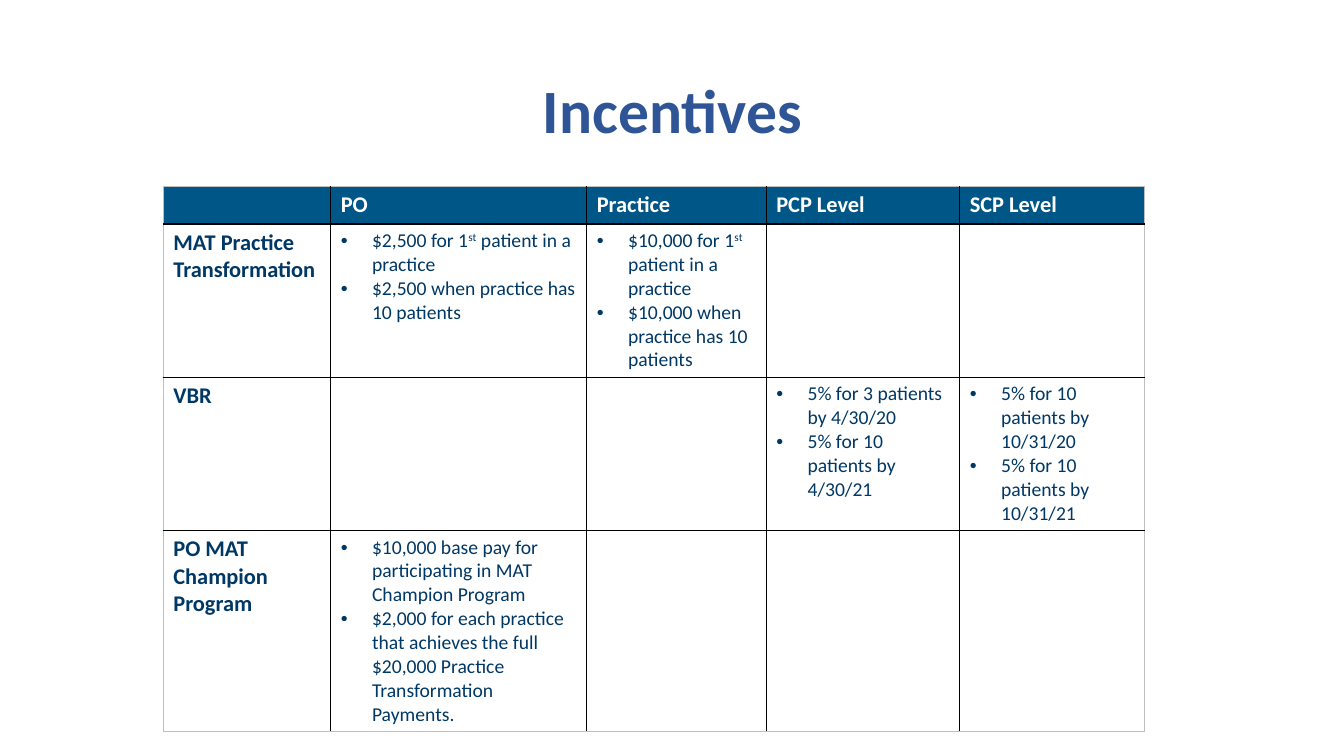
"""Build the Incentives slide: a centred title above a bordered table."""
from dataclasses import dataclass

from lxml import etree
from pptx import Presentation
from pptx.dml.color import RGBColor
from pptx.enum import text
from pptx.oxml import ns
from pptx.util import Inches, Pt


@dataclass(frozen=True)
class Theme:
    font: str = "Calibri"
    title: str = "2F5597"
    header: str = "005687"
    header_text: str = "FFFFFF"
    body: str = "003865"
    grid: str = "000000"
    frame: str = "BFBFBF"
    title_size: int = 44
    label_size: int = 16
    body_size: int = 14


THEME = Theme()
COLUMNS = [1.66, 2.54, 1.78, 1.92, 1.83]
ROWS = [0.37, 1.52, 1.52, 1.99]
HEADINGS = ["", "PO", "Practice", "PCP Level", "SCP Level"]
INCENTIVES = [
    ("MAT Practice Transformation",
     ["$2,500 for 1^st^ patient in a practice",
      "$2,500 when practice has 10 patients"],
     ["$10,000 for 1^st^ patient in a practice",
      "$10,000 when practice has 10 patients"],
     [], []),
    ("VBR", [], [],
     ["5% for 3 patients by 4/30/20", "5% for 10 patients by 4/30/21"],
     ["5% for 10 patients by 10/31/20", "5% for 10 patients by 10/31/21"]),
    ("PO MAT Champion Program",
     ["$10,000 base pay for participating in MAT Champion Program",
      "$2,000 for each practice that achieves the full $20,000 "
      "Practice Transformation Payments."],
     [], [], []),
]


def add_spans(para, content, size, color, bold=False):
    """Add runs to a paragraph; text between carets is superscript."""
    for index, part in enumerate(content.split("^")):
        span = para.add_run()
        span.text = part
        span.font.name = THEME.font
        span.font.size = Pt(size)
        span.font.bold = bold
        span.font.color.rgb = RGBColor.from_string(color)
        if index % 2:
            span.font._element.set("baseline", "30000")


def add_title(page, content):
    """Place and format the title placeholder."""
    box = page.shapes.title
    box.left, box.top = Inches(0.92), Inches(0.4)
    box.width, box.height = Inches(11.5), Inches(1.45)
    frame = box.text_frame
    frame.vertical_anchor = text.MSO_ANCHOR.MIDDLE
    para = frame.paragraphs[0]
    para.alignment = text.PP_ALIGN.CENTER
    para.line_spacing = 0.9
    add_spans(para, content, THEME.title_size, THEME.title, True)


def set_borders(cell, colors):
    """Draw one-point borders in the colour given for each side."""
    props = cell._tc.get_or_add_tcPr()
    for index, (side, color) in enumerate(colors.items()):
        line = etree.Element(ns.qn(f"a:ln{side}"), w=str(Pt(1)))
        fill = etree.SubElement(line, ns.qn("a:solidFill"))
        etree.SubElement(fill, ns.qn("a:srgbClr"), val=color)
        props.insert(index, line)


def add_bullet(para):
    """Give a paragraph a hanging round bullet."""
    props = para._p.get_or_add_pPr()
    props.set("marL", str(Inches(0.31)))
    props.set("indent", str(-Inches(0.31)))
    etree.SubElement(props, ns.qn("a:buFont"), typeface="Arial")
    etree.SubElement(props, ns.qn("a:buChar"), char="•")


def fill_label(cell, content, color):
    """Write a bold heading, or size the empty line of a blank cell."""
    para = cell.text_frame.paragraphs[0]
    if content:
        add_spans(para, content, THEME.label_size, color, True)
    else:
        etree.SubElement(para._p, ns.qn("a:endParaRPr"),
                         sz=str(THEME.label_size * 100))


def fill_bullets(cell, items):
    """Write one bulleted paragraph for each item."""
    frame = cell.text_frame
    for index, item in enumerate(items):
        para = frame.add_paragraph() if index else frame.paragraphs[0]
        add_bullet(para)
        add_spans(para, item, THEME.body_size, THEME.body)


def style_cell(cell, row, column):
    """Set the fill and the borders that suit a cell's place."""
    if row == 0:
        cell.fill.solid()
        cell.fill.fore_color.rgb = RGBColor.from_string(THEME.header)
    else:
        cell.fill.background()
    outer = {"L": column == 0, "R": column == len(COLUMNS) - 1,
             "T": row == 0, "B": row == len(ROWS) - 1}
    set_borders(cell, {side: THEME.frame if edge else THEME.grid
                       for side, edge in outer.items()})


def add_incentive_table(page):
    """Add the table of incentives by programme and level."""
    table = page.shapes.add_table(
        len(ROWS), len(COLUMNS), Inches(1.62), Inches(1.85),
        Inches(sum(COLUMNS)), Inches(sum(ROWS))).table
    table.horz_banding = False
    for column, width in zip(table.columns, COLUMNS):
        column.width = Inches(width)
    for row, height in zip(table.rows, ROWS):
        row.height = Inches(height)
    for r, values in enumerate([HEADINGS, *INCENTIVES]):
        for c, value in enumerate(values):
            cell = table.cell(r, c)
            style_cell(cell, r, c)
            if isinstance(value, str):
                fill_label(cell, value, THEME.body if r else THEME.header_text)
            else:
                fill_bullets(cell, value)


def main():
    """Create the deck and save it."""
    deck = Presentation()
    deck.slide_width, deck.slide_height = Inches(13.33), Inches(7.5)
    page = deck.slides.add_slide(deck.slide_layouts[5])
    add_title(page, "Incentives")
    add_incentive_table(page)
    deck.save("out.pptx")


if __name__ == "__main__":
    main()
